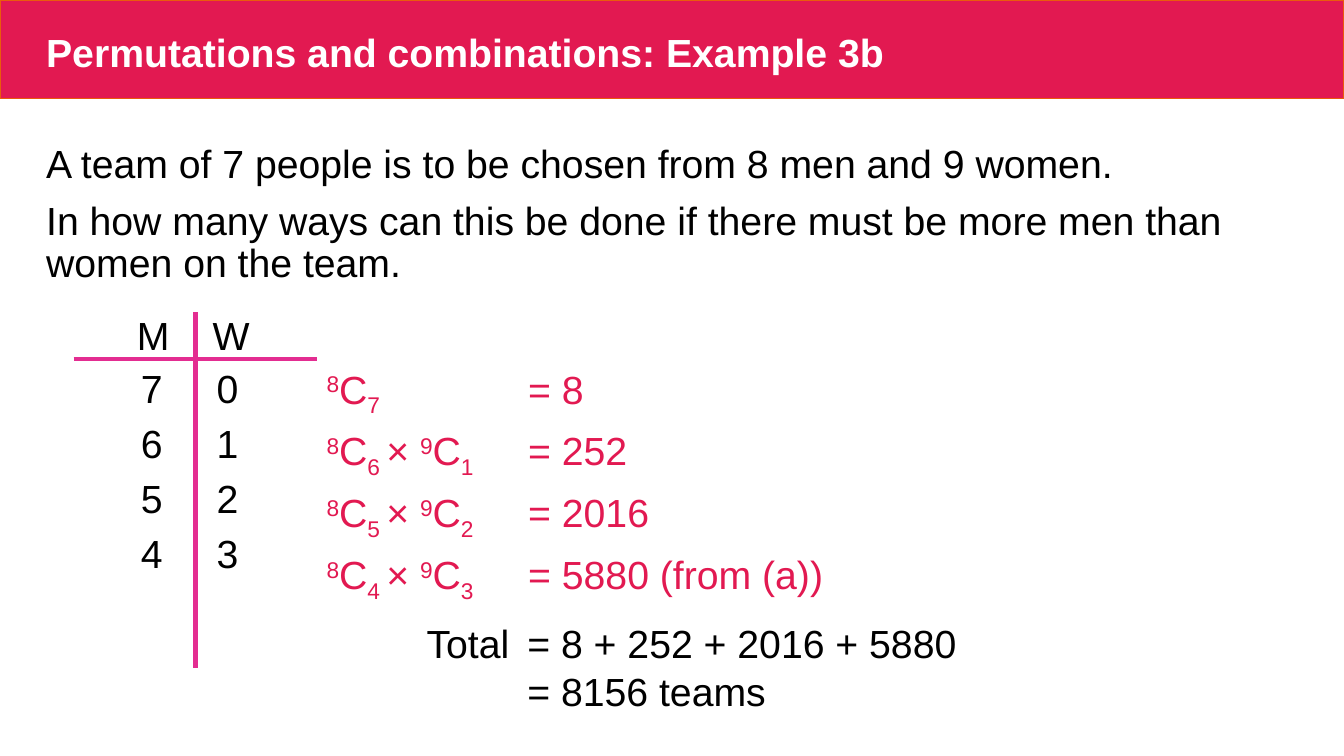
from lxml.etree import SubElement
from pptx import Presentation
from pptx.dml.color import RGBColor
from pptx.enum.shapes import MSO_CONNECTOR as Connector, MSO_SHAPE as Shape
from pptx.enum.text import MSO_ANCHOR as Anchor, MSO_AUTO_SIZE as AutoSize
from pptx.oxml.ns import qn
from pptx.util import Inches, Pt

CRIMSON, PINK, ORANGE = "E21951", "E32D91", "EA5B0C"
BLACK, WHITE = "000000", "FFFFFF"


def rgb(code):
    return RGBColor.from_string(code)


def write(paragraph, text, color=BLACK, bold=False, baseline=0, size=28, font="Arial"):
    run = paragraph.add_run()
    run.text = text
    run.font.size = Pt(size)
    run.font.name = font
    run.font.bold = bold
    run.font.color.rgb = rgb(color)
    if baseline:
        run.font._rPr.set("baseline", str(baseline * 1000))


class Board:
    def __init__(self, deck):
        self.width, self.height = deck.slide_width, deck.slide_height
        self.slide = deck.slides.add_slide(deck.slide_layouts[6])

    def place(self, x, y):
        return round(self.width * x / 100), round(self.height * y / 100)

    def band(self, x, y, w, h, fill, line):
        bar = self.slide.shapes.add_shape(Shape.RECTANGLE, *self.place(x, y), *self.place(w, h))
        bar.shadow.inherit = False
        bar.fill.solid()
        bar.fill.fore_color.rgb = rgb(fill)
        bar.line.color.rgb = rgb(line)
        bar.line.width = Pt(1)

    def rule(self, start, end, color=PINK, weight=3):
        stroke = self.slide.shapes.add_connector(
            Connector.STRAIGHT, *self.place(*start), *self.place(*end))
        stroke.line.color.rgb = rgb(color)
        stroke.line.width = Pt(weight)
        SubElement(stroke._element.spPr, qn("a:effectLst"))

    def text(self, x, y, w, h, paragraphs, tab=None, spacing=None, before=0,
             first_before=0, anchor=Anchor.TOP, grow=True, **style):
        frame = self.slide.shapes.add_textbox(*self.place(x, y), *self.place(w, h)).text_frame
        frame.word_wrap = True
        frame.vertical_anchor = anchor
        frame.auto_size = AutoSize.SHAPE_TO_FIT_TEXT if grow else AutoSize.NONE
        for index, pieces in enumerate(paragraphs):
            paragraph = frame.add_paragraph() if index else frame.paragraphs[0]
            paragraph.line_spacing = spacing
            paragraph.space_before = Pt(before if index else first_before)
            if tab:
                stops = SubElement(paragraph._p.get_or_add_pPr(), qn("a:tabLst"))
                SubElement(stops, qn("a:tab"), pos=str(Inches(tab)), algn="l")
            for piece, baseline in pieces:
                write(paragraph, piece, baseline=baseline, **style)


def plain(*lines):
    return [[(line, 0)] for line in lines]


def choose(total, chosen):
    return [(str(total), 30), ("C", 0), (str(chosen), -25)]


def count_ways(men, women, ways):
    pieces = choose(8, men)
    if women:
        pieces += [(" ", -25), ("× ", 0)] + choose(9, women)
    return pieces + [(f"\t= {ways}", 0)]


def main():
    deck = Presentation()
    deck.slide_width, deck.slide_height = Inches(13.33), Inches(7.5)
    board = Board(deck)

    board.band(0, 0, 100, 13.07, CRIMSON, ORANGE)
    board.text(2.7, 2.53, 94.5, 8.13, plain("Permutations and combinations: Example 3b"),
               spacing=0.9, anchor=Anchor.BOTTOM, grow=False, color=WHITE, bold=True)
    question = plain(
        "A team of 7 people is to be chosen from 8 men and 9 women.",
        "In how many ways can this be done if there must be more men than women on the team.")
    board.text(2.7, 18.53, 94.5, 77.6, question, spacing=0.9, before=10, first_before=10, grow=False)

    board.rule((5.48, 47.47), (23.56, 47.47))
    board.rule((14.55, 41.33), (14.55, 88.4))
    board.text(9.45, 40.53, 10, 7.6, plain("M\tW"), tab=0.75)

    cases = [(7, 0, "8"), (6, 1, "252"), (5, 2, "2016"), (4, 3, "5880 (from (a))")]
    for row, (men, women, _) in enumerate(cases):
        board.text(9.75, 47.47 + 7.3 * row, 9.5, 7.6, plain(f"{men}\t{women}"), tab=0.75)

    board.text(23.56, 47.6, 41, 36.1, [count_ways(*case) for case in cases],
               tab=2, before=6, color=CRIMSON)
    board.text(31, 81.33, 46, 13.87,
               plain("Total\t= 8 + 252 + 2016 + 5880", "\t= 8156 teams"), tab=1)

    deck.save("out.pptx")


if __name__ == "__main__":
    main()
